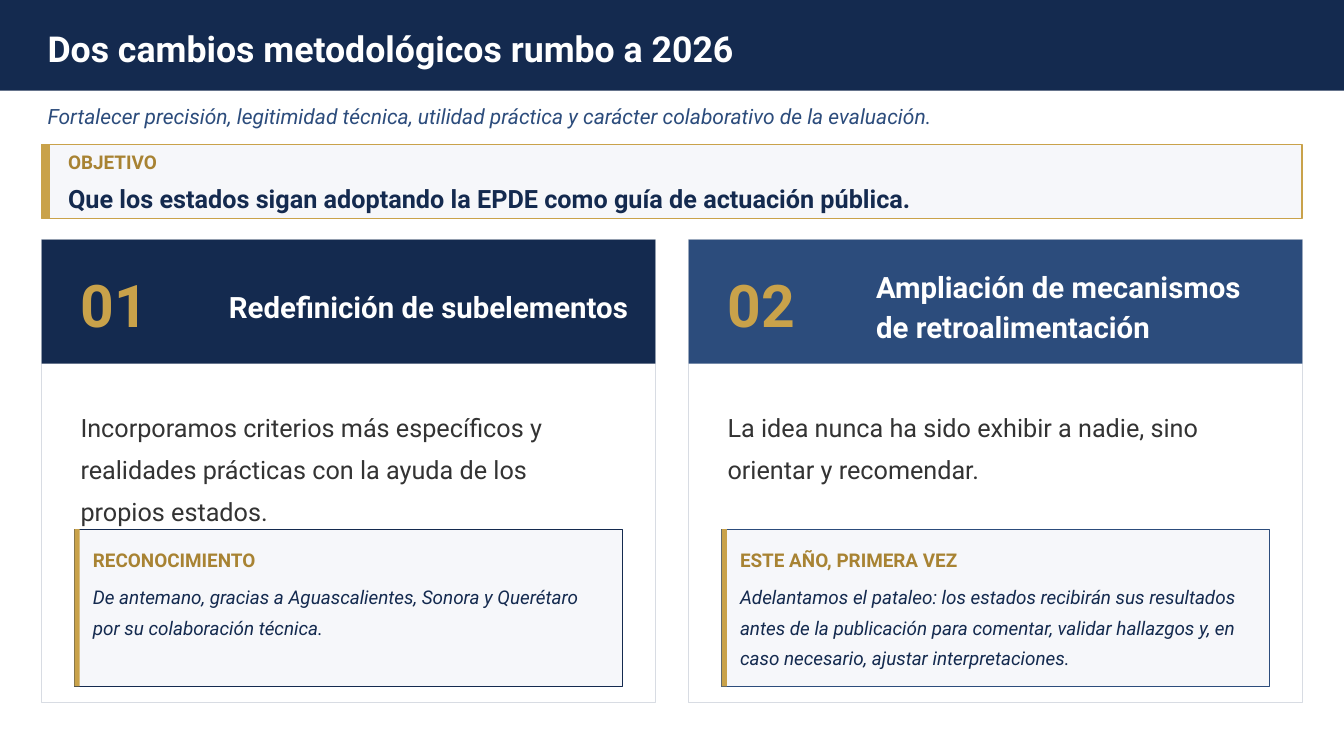
from dataclasses import dataclass

from pptx import Presentation
from pptx.dml.color import RGBColor
from pptx.enum.shapes import MSO_SHAPE
from pptx.enum.text import MSO_ANCHOR, MSO_AUTO_SIZE
from pptx.util import Inches, Pt

RECTANGLE = MSO_SHAPE.RECTANGLE
TOP, MIDDLE = MSO_ANCHOR.TOP, MSO_ANCHOR.MIDDLE
GROW = MSO_AUTO_SIZE.SHAPE_TO_FIT_TEXT


@dataclass(frozen=True)
class Theme:
    font: str = "Roboto"
    navy: str = "142A4F"
    blue: str = "2C4C7C"
    gold: str = "C9A24A"
    bronze: str = "A88333"
    panel: str = "F6F7FA"
    border: str = "D8DCE3"
    ink: str = "333333"
    white: str = "FFFFFF"
    number: int = 56
    title: int = 34
    heading: int = 28
    body: int = 24
    subtitle: int = 20
    label: int = 18


@dataclass
class Line:
    text: str
    size: int
    color: str
    bold: bool = False
    italic: bool = False
    spacing: float = 1.0
    before: int = 0


class Deck:
    COLUMNS = ROWS = 100

    def __init__(self, theme, width, height):
        self.theme = theme
        self.presentation = Presentation()
        self.presentation.slide_width = Inches(width)
        self.presentation.slide_height = Inches(height)
        self.slide = None

    def add_slide(self):
        blank = self.presentation.slide_layouts[6]
        self.slide = self.presentation.slides.add_slide(blank)

    def place(self, left, top, width, height):
        column = self.presentation.slide_width / self.COLUMNS
        row = self.presentation.slide_height / self.ROWS
        return (round(left * column), round(top * row),
                round(width * column), round(height * row))

    def box(self, area, fill, outline=None, weight=1):
        shape = self.slide.shapes.add_shape(RECTANGLE, *self.place(*area))
        shape.shadow.inherit = False
        shape.fill.solid()
        shape.fill.fore_color.rgb = RGBColor.from_string(fill)
        if outline:
            shape.line.color.rgb = RGBColor.from_string(outline)
            shape.line.width = Pt(weight)
        else:
            shape.line.fill.background()

    def text(self, area, *lines, anchor=TOP):
        frame = self.slide.shapes.add_textbox(*self.place(*area)).text_frame
        frame.word_wrap = True
        frame.auto_size = GROW
        frame.vertical_anchor = anchor
        frame.margin_left = frame.margin_right = Inches(0.08)
        frame.margin_top = frame.margin_bottom = Inches(0.04)
        for index, line in enumerate(lines):
            paragraph = frame.add_paragraph() if index else frame.paragraphs[0]
            paragraph.text = line.text
            paragraph.line_spacing = line.spacing
            paragraph.space_before = Pt(line.before)
            font = paragraph.font
            font.name = self.theme.font
            font.size = Pt(line.size)
            font.bold, font.italic = line.bold, line.italic
            font.color.rgb = RGBColor.from_string(line.color)

    def callout(self, area, accent_width, outline, weight):
        left, top, _, height = area
        self.box(area, self.theme.panel, outline, weight)
        self.box((left, top, accent_width, height), self.theme.gold)

    def card(self, left, color, number, heading, body, body_height,
             label, note, note_height):
        theme = self.theme
        inner = left + 2.45
        self.box((left, 31.7, 45.67, 61.2), theme.white, theme.border, 0.75)
        self.box((left, 31.7, 45.67, 16.4), color)
        self.text((inner, 34.8, 10.46, 10.9),
                  Line(number, theme.number, theme.gold, bold=True), anchor=MIDDLE)
        self.text((left + 13.5, 34.6, 30.93, 11.3),
                  Line(heading, theme.heading, theme.white, bold=True, spacing=1.15),
                  anchor=MIDDLE)
        self.text((inner, 52.5, 40.78, body_height),
                  Line(body, theme.body, theme.ink, spacing=1.4))
        self.callout((inner, 70, 40.78, 20.8), 0.39, color, 1)
        self.text((left + 3.37, 72.2, 38.92, note_height),
                  Line(label, theme.label, theme.bronze, bold=True),
                  Line(note, theme.label, theme.navy, italic=True,
                       spacing=1.35, before=6))


def main():
    theme = Theme()
    deck = Deck(theme, 17.78, 10)
    deck.add_slide()
    margin, content_width = 3.09, 93.81

    deck.box((0, 0, 100, 12), theme.navy)
    deck.text((margin, 2, content_width, 8.7),
              Line("Dos cambios metodológicos rumbo a 2026",
                   theme.title, theme.white, bold=True), anchor=MIDDLE)
    deck.text((margin, 13.3, content_width, 4.2),
              Line("Fortalecer precisión, legitimidad técnica, utilidad práctica "
                   "y carácter colaborativo de la evaluación.",
                   theme.subtitle, theme.blue, italic=True))

    deck.callout((margin, 19.1, content_width, 9.8), 0.62, theme.gold, 1.5)
    deck.text((4.61, 19.6, 92.24, 8.9),
              Line("OBJETIVO", theme.label, theme.bronze, bold=True),
              Line("Que los estados sigan adoptando la EPDE como guía de "
                   "actuación pública.", theme.body, theme.navy, bold=True,
                   spacing=1.2, before=4), anchor=MIDDLE)

    changes = [
        (theme.navy, "01", "Redefinición de subelementos",
         "Incorporamos criterios más específicos y realidades prácticas con la "
         "ayuda de los propios estados.", 17.2,
         "RECONOCIMIENTO",
         "De antemano, gracias a Aguascalientes, Sonora y Querétaro por su "
         "colaboración técnica.", 12.5),
        (theme.blue, "02", "Ampliación de mecanismos de retroalimentación",
         "La idea nunca ha sido exhibir a nadie, sino orientar y recomendar.", 11.5,
         "ESTE AÑO, PRIMERA VEZ",
         "Adelantamos el pataleo: los estados recibirán sus resultados antes de "
         "la publicación para comentar, validar hallazgos y, en caso necesario, "
         "ajustar interpretaciones.", 16.5),
    ]
    for index, change in enumerate(changes):
        deck.card(margin + index * 48.15, *change)

    deck.presentation.save("out.pptx")


if __name__ == "__main__":
    main()
